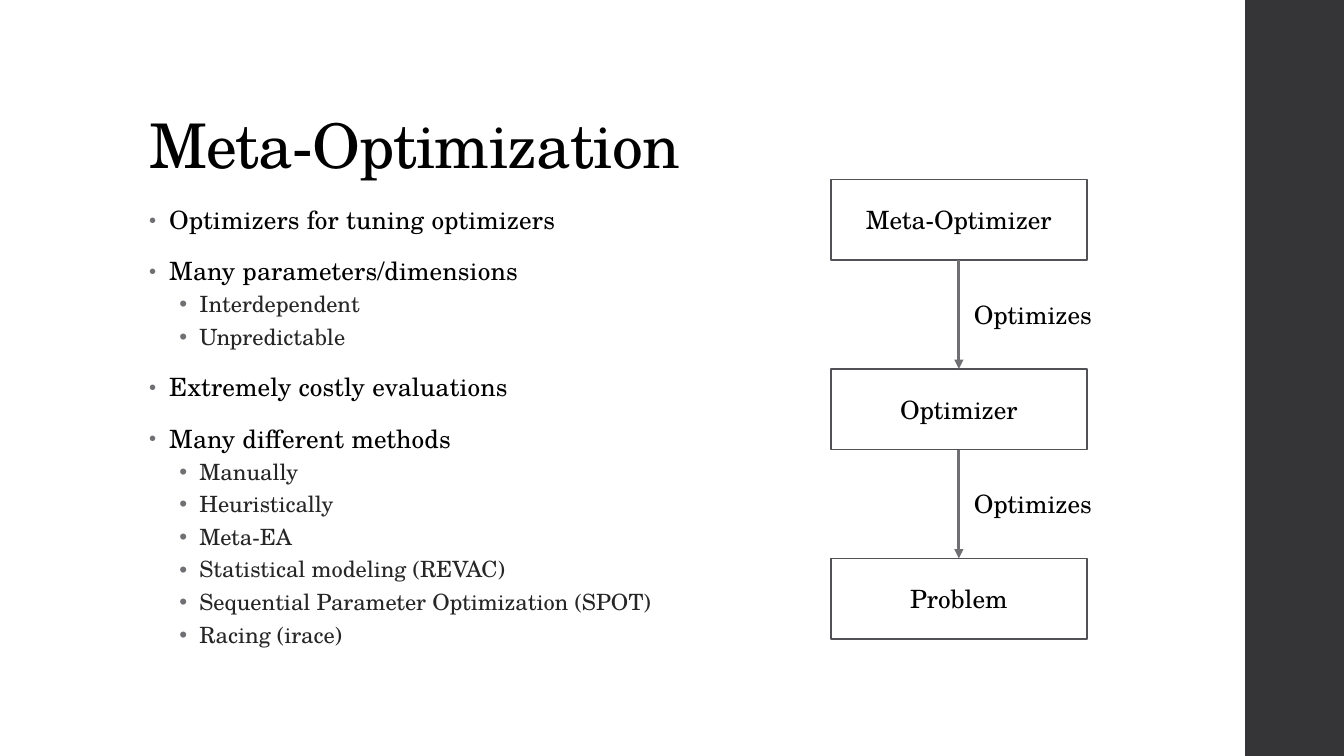
from dataclasses import dataclass

from lxml.etree import SubElement
from pptx import Presentation
from pptx.dml.color import RGBColor as Color
from pptx.enum.shapes import MSO_CONNECTOR as Connector, MSO_SHAPE as Shape
from pptx.enum.text import MSO_ANCHOR as Anchor, PP_ALIGN as Align
from pptx.oxml.ns import qn
from pptx.util import Inches, Pt


@dataclass(frozen=True)
class Theme:
    """Font, colours and type sizes of the slide."""
    font: str = "TeX Gyre Schola"
    ink: str = "000000"
    soft_ink: str = "262626"
    band: str = "353537"
    outline: str = "525256"
    accent: str = "6F6F74"
    title_size: int = 44
    text_size: int = 18
    detail_size: int = 16


@dataclass(frozen=True)
class Level:
    """Look of one bullet level."""
    indent: float
    line_spacing: float
    before: int
    after: int
    bullet_percent: int
    size: int
    color: str
    tracking: float


THEME = Theme()
LEVELS = (
    Level(0.2, 0.95, 14, 2, 80, THEME.text_size, THEME.ink, 0.1),
    Level(0.5, 0.9, 3, 3, 100, THEME.detail_size, THEME.soft_ink, 0),
)
HANGING = 0.2

TOPICS = (
    ("Optimizers for tuning optimizers", ()),
    ("Many parameters/dimensions", ("Interdependent", "Unpredictable")),
    ("Extremely costly evaluations", ()),
    ("Many different methods", (
        "Manually", "Heuristically", "Meta-EA", "Statistical modeling (REVAC)",
        "Sequential Parameter Optimization (SPOT)", "Racing (irace)")),
)
STAGES = ("Meta-Optimizer", "Optimizer", "Problem")
STAGE_LEFT, STAGE_TOP, STAGE_WIDTH, STAGE_HEIGHT = 8.24, 1.78, 2.54, 0.8
STAGE_STEP = 1.88


def style_text(para, size=THEME.text_size, color=THEME.ink, tracking=0):
    """Format every run of a paragraph; tracking is in points."""
    for span in para.runs:
        span.font.name = THEME.font
        span.font.size = Pt(size)
        span.font.color.rgb = Color.from_string(color)
        if tracking:
            span.font._element.set("spc", str(round(tracking * 100)))


def add_text_box(page, left, top, width, height, wrap=True):
    """Add an empty text box and return its text frame."""
    box = page.shapes.add_textbox(*map(Inches, (left, top, width, height)))
    box.text_frame.word_wrap = wrap
    return box.text_frame


def add_rectangle(page, left, top, width, height):
    """Add a rectangle without shadow, fill or line."""
    box = page.shapes.add_shape(
        Shape.RECTANGLE, *map(Inches, (left, top, width, height)))
    box.shadow.inherit = False
    box.fill.background()
    box.line.fill.background()
    return box


def add_band(page):
    """Add the dark band on the right edge."""
    band = add_rectangle(page, 12.35, 0, 0.98, 7.5)
    band.fill.solid()
    band.fill.fore_color.rgb = Color.from_string(THEME.band)


def add_title(page, text):
    """Add the slide title."""
    frame = add_text_box(page, 1.38, 0.4, 10.6, 1.45)
    frame.vertical_anchor = Anchor.BOTTOM
    frame.text = text
    para = frame.paragraphs[0]
    para.line_spacing = 0.9
    style_text(para, THEME.title_size, tracking=-0.5)


def format_bullet(para, level):
    """Give a paragraph the spacing, indent and bullet of its level."""
    look = LEVELS[level]
    para.level = level
    para.line_spacing = look.line_spacing
    para.space_before, para.space_after = Pt(look.before), Pt(look.after)
    style_text(para, look.size, look.color, look.tracking)
    props = para._p.get_or_add_pPr()
    props.set("marL", str(Inches(look.indent)))
    props.set("indent", str(-Inches(HANGING)))
    bullet_color = SubElement(props, qn("a:buClr"))
    SubElement(bullet_color, qn("a:srgbClr"), val=THEME.accent)
    SubElement(props, qn("a:buSzPct"), val=str(look.bullet_percent * 1000))
    SubElement(props, qn("a:buFont"), typeface="Arial")
    SubElement(props, qn("a:buChar"), char="\u2022")


def add_topics(page, topics):
    """Add the two-level bullet list."""
    lines = [(text, level) for topic, details in topics
             for text, level in [(topic, 0), *((item, 1) for item in details)]]
    frame = add_text_box(page, 1.38, 2, 6.6, 5.23)
    frame.text = "\n".join(text for text, _ in lines)
    for para, (_, level) in zip(frame.paragraphs, lines):
        format_bullet(para, level)


def add_stage(page, text, top):
    """Add one outlined box of the flow and return it."""
    box = add_rectangle(page, STAGE_LEFT, top, STAGE_WIDTH, STAGE_HEIGHT)
    box.line.color.rgb = Color.from_string(THEME.outline)
    box.line.width = Pt(1.1)
    frame = box.text_frame
    frame.word_wrap = True
    frame.vertical_anchor = Anchor.MIDDLE
    frame.text = text
    frame.paragraphs[0].alignment = Align.CENTER
    style_text(frame.paragraphs[0])
    return box


def add_arrow(page, upper, lower):
    """Join the bottom of one stage to the top of the next."""
    arrow = page.shapes.add_connector(Connector.STRAIGHT, 0, 0, 0, 0)
    arrow.begin_connect(upper, 2)
    arrow.end_connect(lower, 0)
    arrow.line.color.rgb = Color.from_string(THEME.accent)
    arrow.line.width = Pt(2.25)
    SubElement(arrow.line._get_or_add_ln(), qn("a:tailEnd"), type="triangle")
    SubElement(arrow._element.spPr, qn("a:effectLst"))


def add_arrow_label(page, text, top):
    """Add the label to the right of an arrow."""
    center = STAGE_LEFT + STAGE_WIDTH / 2
    frame = add_text_box(page, center + 0.05, top, 1.39, 0.4, wrap=False)
    frame.text = text
    style_text(frame.paragraphs[0])


def add_flow(page, names):
    """Add the column of stages with labelled arrows between them."""
    tops = [STAGE_TOP + index * STAGE_STEP for index in range(len(names))]
    stages = [add_stage(page, name, top) for name, top in zip(names, tops)]
    for upper, lower, top in zip(stages, stages[1:], tops):
        add_arrow(page, upper, lower)
        add_arrow_label(page, "Optimizes", top + 1.14)


def main():
    """Build the slide and save the deck."""
    deck = Presentation()
    deck.slide_width, deck.slide_height = Inches(13.33), Inches(7.5)
    page = deck.slides.add_slide(deck.slide_layouts[6])
    add_band(page)
    add_title(page, "Meta-Optimization")
    add_topics(page, TOPICS)
    add_flow(page, STAGES)
    deck.save("out.pptx")


main()
